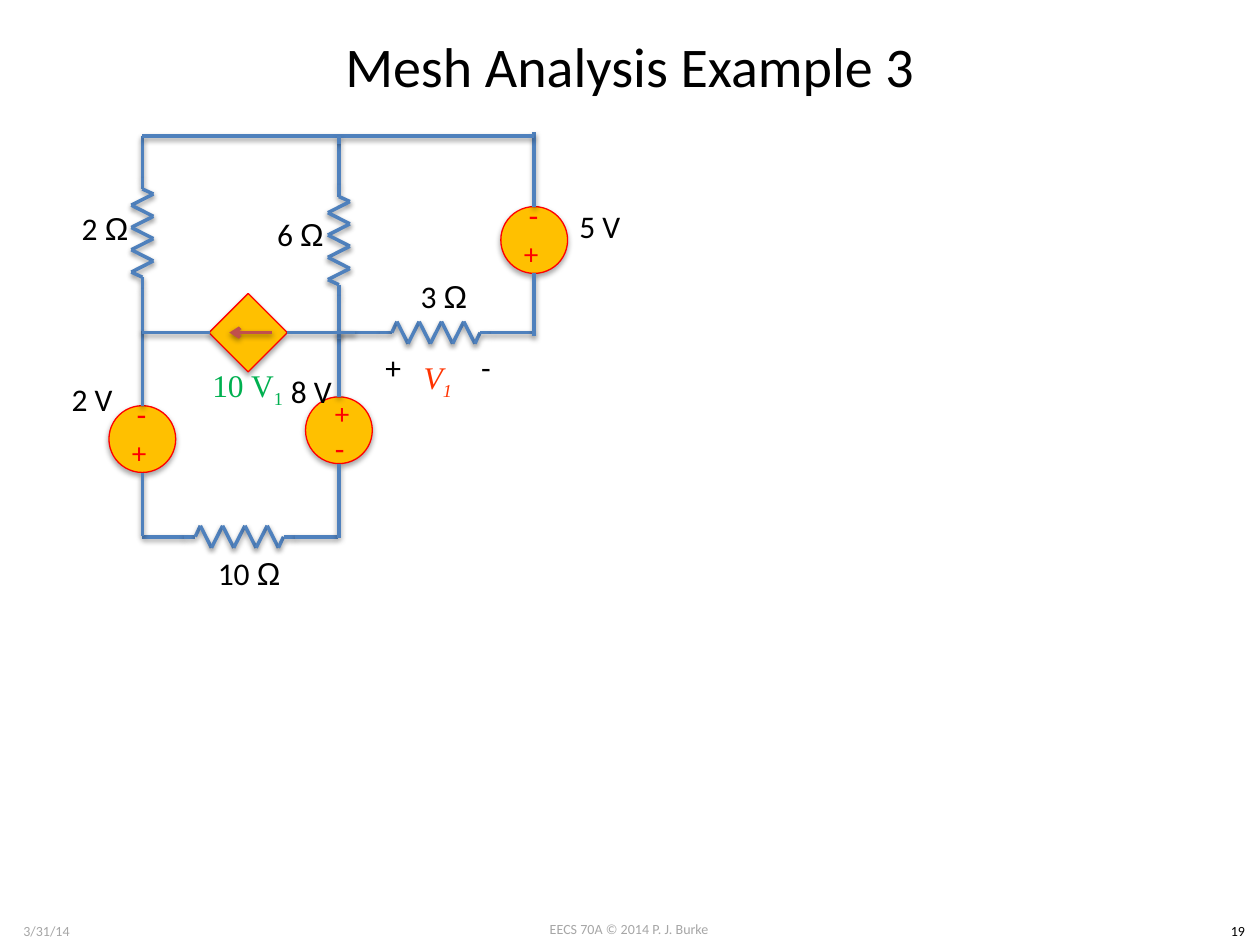
from itertools import pairwise

from pptx import Presentation
from pptx.dml.color import RGBColor
from pptx.enum import shapes, text
from pptx.oxml import parse_xml
from pptx.oxml.ns import nsdecls
from pptx.util import Inches, Pt

WIRE, SOURCE_FILL, SOURCE_LINE = "4F81BD", "FFC000", "FF0000"
BLACK, GREY = "000000", "A6A6A6"
LEFT, MIDDLE, RIGHT = 1.13, 2.69, 4.24
TOP, CENTRE, BOTTOM = 1.08, 2.64, 4.26
DIAMETER = 0.53
OMEGA = ("Ω", {"font": "Arial"})
SUBSCRIPT = ("1", {"baseline": -25000})


def color(value):
    return RGBColor.from_string(value)


def add_shadow(shape, opacity, distance):
    shape._element.spPr.append(parse_xml(
        f'<a:effectLst {nsdecls("a")}><a:outerShdw blurRad="{Pt(3.1)}" '
        f'dist="{Pt(distance)}" dir="5400000" rotWithShape="0">'
        f'<a:srgbClr val="000000"><a:alpha val="{opacity * 1000}"/></a:srgbClr>'
        '</a:outerShdw></a:effectLst>'))


def fill_text(frame, runs, size=18, font="Calibri", fill=BLACK, align="LEFT",
              anchor="TOP", wrap=True, italic=None):
    """Write runs, each a string or a pair of string and differing format."""
    frame.word_wrap = wrap
    frame.vertical_anchor = getattr(text.MSO_ANCHOR, anchor)
    paragraph = frame.paragraphs[0]
    paragraph.alignment = getattr(text.PP_ALIGN, align)
    for item in runs:
        words, changes = (item, {}) if isinstance(item, str) else item
        run = paragraph.add_run()
        run.text = words
        run.font.size = Pt(size)
        run.font.name = changes.get("font", font)
        run.font.color.rgb = color(fill)
        run.font.italic = italic
        if "baseline" in changes:
            run._r.get_or_add_rPr().set("baseline", str(changes["baseline"]))


def add_text(parent, box, *runs, rotation=0, **style):
    shape = parent.add_textbox(*map(Inches, box))
    shape.rotation = rotation
    fill_text(shape.text_frame, runs, **style)


def add_line(parent, start, end, line_color=WIRE, arrow=False):
    line = parent.add_connector(shapes.MSO_CONNECTOR.STRAIGHT,
                                *map(Inches, (*start, *end)))
    line.line.color.rgb = color(line_color)
    line.line.width = Pt(2)
    if arrow:
        line.line._get_or_add_ln().append(
            parse_xml(f'<a:tailEnd {nsdecls("a")} type="arrow"/>'))
    add_shadow(line, 38, 1.6)


def add_body(parent, preset, box, rotation=0):
    """Draw the filled outline of a source."""
    shape = parent.add_shape(preset, *map(Inches, box))
    shape.rotation = rotation
    shape.fill.solid()
    shape.fill.fore_color.rgb = color(SOURCE_FILL)
    shape.line.color.rgb = color(SOURCE_LINE)
    shape.line.width = Pt(0.75)
    add_shadow(shape, 35, 1.8)


def add_resistor(slide, x, y, vertical=False):
    """Draw a zigzag with leads, starting at x, y and 1.55 inches long."""
    parent = slide.shapes.add_group_shape().shapes
    peaks = [(0.46 + 0.0885 * i, 0.0875 * (-1) ** i) for i in range(8)]
    route = [(0, 0), (0.33, 0), (0.42, 0), *peaks, (1.12, 0), (1.21, 0), (1.55, 0)]
    points = [(x + across, y + along) if vertical else (x + along, y - across)
              for along, across in route]
    for start, end in pairwise(points):
        add_line(parent, start, end)


def add_voltage_source(slide, x, y, flipped=False):
    """Draw a circle centred on x with its top at y; flipped puts minus on top."""
    parent = slide.shapes.add_group_shape().shapes
    add_body(parent, shapes.MSO_SHAPE.OVAL, (x - DIAMETER / 2, y, DIAMETER, DIAMETER))
    upper, lower = ("-", "+") if flipped else ("+", "-")
    for sign, offset in ((upper, -0.04), (lower, 0.24)):
        add_text(parent, (x - 0.13, y + offset, 0.26, 0.33), sign,
                 size=16.6 if sign == "+" else 18, fill=SOURCE_LINE, align="CENTER",
                 anchor="MIDDLE", rotation=180 if flipped else 0)
    above, below = (0.59, 0.5) if flipped else (0.51, 0.59)
    add_line(parent, (x, y - above), (x, y))
    add_line(parent, (x, y + DIAMETER), (x, y + DIAMETER + below))


def add_current_source(slide, x, y):
    """Draw the dependent source centred on x, y with its arrow and wires."""
    parent = slide.shapes
    add_body(parent, shapes.MSO_SHAPE.RECTANGLE, (x - 0.22, y - 0.22, 0.44, 0.44), 315)
    add_line(parent, (x - 0.3, y), (LEFT, y))
    add_line(parent, (x + 0.85, y), (x + 0.31, y))
    add_line(parent, (x + 0.19, y), (x - 0.15, y), "C0504D", arrow=True)


def add_circuit(slide):
    add_resistor(slide, MIDDLE, CENTRE)
    add_resistor(slide, LEFT, BOTTOM)
    add_voltage_source(slide, MIDDLE, 3.15)
    add_voltage_source(slide, LEFT, 3.22, flipped=True)
    add_resistor(slide, LEFT, TOP, vertical=True)
    add_resistor(slide, MIDDLE, 1.14, vertical=True)
    add_voltage_source(slide, RIGHT, 1.64, flipped=True)
    add_line(slide.shapes, (RIGHT, TOP), (LEFT, TOP))
    add_line(slide.shapes, (MIDDLE, 1.14), (MIDDLE, TOP))
    add_current_source(slide, 1.97, CENTRE)


def add_labels(slide):
    parent = slide.shapes
    for x, y, width, *runs in (
            (3.24, 2.15, 0.58, "3 ", OMEGA), (1.63, 4.35, 0.71, "10 ", OMEGA),
            (0.55, 1.61, 0.58, "2 ", OMEGA), (2.1, 1.66, 0.58, "6 ", OMEGA),
            (2.21, 2.9, 0.53, "8 V"), (0.47, 2.97, 0.53, "2 V"),
            (4.5, 1.59, 0.53, "5 V"), (2.96, 2.71, 0.33, "+"), (3.72, 2.71, 0.28, "-")):
        add_text(parent, (x, y, width, 0.4), *runs, wrap=False)
    variable = {"font": "Times New Roman", "align": "CENTER", "anchor": "MIDDLE"}
    add_text(parent, (1.37, 2.71, 1.19, 0.73), "10 V", SUBSCRIPT,
             fill="00B050", **variable)
    add_text(parent, (3.09, 2.71, 0.77, 0.61), "V", SUBSCRIPT,
             fill="FF3300", italic=True, **variable)


def add_footer(slide):
    for box, words, fill in (
            ((3.83, 7.26, 2.33, 0.24), "EECS 70A © 2014 P. J. Burke", GREY),
            ((0, 7.27, 0.74, 0.24), "3/31/14", GREY),
            ((9.65, 7.27, 0.35, 0.24), "19", BLACK)):
        add_text(slide.shapes, box, words, size=8, fill=fill, align="CENTER")


def add_title(slide):
    title = slide.shapes.title
    title.left, title.top, title.width, title.height = map(Inches, (0.5, -0.11, 9, 1.25))
    fill_text(title.text_frame, ["Mesh Analysis Example 3"], size=32,
              align="CENTER", anchor="MIDDLE")


def main():
    presentation = Presentation()
    presentation.slide_width, presentation.slide_height = Inches(10), Inches(7.5)
    slide = presentation.slides.add_slide(presentation.slide_layouts[5])
    add_footer(slide)
    add_title(slide)
    add_circuit(slide)
    add_labels(slide)
    presentation.save("out.pptx")


if __name__ == "__main__":
    main()
